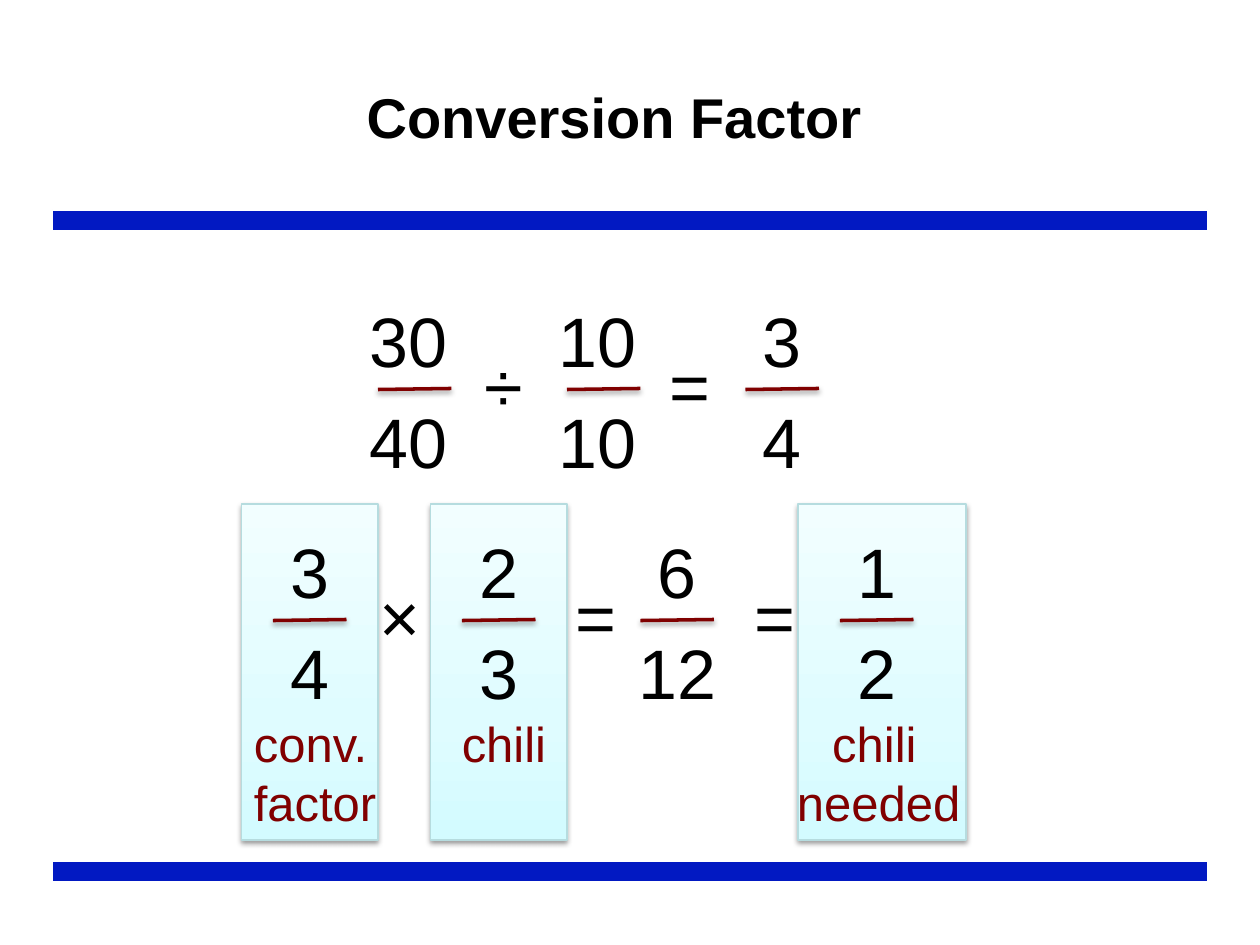
from lxml import etree
from pptx import Presentation
from pptx.dml.color import RGBColor
from pptx.enum.dml import MSO_LINE
from pptx.enum.shapes import MSO_CONNECTOR, MSO_SHAPE
from pptx.enum.text import MSO_ANCHOR, MSO_AUTO_SIZE, PP_ALIGN
from pptx.oxml import parse_xml
from pptx.oxml.ns import nsdecls, qn
from pptx.util import Inches, Pt

LEFT, CENTER = PP_ALIGN.LEFT, PP_ALIGN.CENTER
RECTANGLE, STRAIGHT = MSO_SHAPE.RECTANGLE, MSO_CONNECTOR.STRAIGHT
MIDDLE, TOP = MSO_ANCHOR.MIDDLE, MSO_ANCHOR.TOP
FIT_SHAPE, NO_FIT = MSO_AUTO_SIZE.SHAPE_TO_FIT_TEXT, MSO_AUTO_SIZE.NONE
SOLID = MSO_LINE.SOLID

# Content: places are columns and rows of a grid with 12 cells to the inch
TITLE = "Conversion Factor"
EQUATIONS = [
    {
        "row": 27,
        "fractions": [(34, "30", "40", LEFT), (52, "10", "10", LEFT), (69, "3", "4", CENTER)],
        "operators": [(45, "÷"), (62.6, "=")],
    },
    {
        "row": 49,
        "fractions": [(24, "3", "4", CENTER), (42, "2", "3", CENTER),
                      (59, "6", "12", CENTER), (78, "1", "2", CENTER)],
        "operators": [(35, "×"), (53.6, "="), (70.7, "=")],
    },
]
CARDS = [(76, 16), (41, 13), (23, 13)]  # column, width
BAR_ROWS = [20, 82]
CAPTIONS = ["conv.\tchili\tchili", "factor\tneeded"]
CAPTION_TABS = [(1.65, 4.59), (4.31,)]  # inches from the text edge

THEME = {
    "font": "Arial",
    "text": "000000",
    "accent": "800000",
    "bar": "0219C2",
    "bar_edge": "FFFFFF",
    "card_edge": "B6DCDF",
    "card_stops": [(0, "D3FBFF"), (35, "DFFCFF"), (100, "F2FEFF")],
    "title_size": 32,
    "math_size": 40,
    "caption_size": 28,
}


def grid(*cells):
    return [Inches(cell / 12) for cell in cells]


def write(shape, lines, size, color=THEME["text"], align=LEFT, bold=False, gap=0,
          tabs=(), wrap=True, fit=NO_FIT, anchor=TOP, margin_top=0.05):
    frame = shape.text_frame
    frame.word_wrap = wrap
    frame.auto_size = fit
    frame.vertical_anchor = anchor
    frame.margin_top = Inches(margin_top)
    for index, line in enumerate(lines):
        paragraph = frame.paragraphs[0] if index == 0 else frame.add_paragraph()
        paragraph.text = line
        paragraph.alignment = align
        paragraph.space_before = Pt(gap if index else 0)
        if tabs:
            tab_list = etree.SubElement(paragraph._p.get_or_add_pPr(), qn("a:tabLst"))
            for position in tabs[index]:
                etree.SubElement(tab_list, qn("a:tab"), pos=str(Inches(position)), algn="l")
        for run in paragraph.runs:
            run.font.name = THEME["font"]
            run.font.size = Pt(size)
            run.font.bold = bold
            run.font.color.rgb = RGBColor.from_string(color)


def set_line(shape, color, width):
    shape.line.color.rgb = RGBColor.from_string(color)
    shape.line.width = Pt(width)
    shape.line.dash_style = SOLID


def add_shadow(shape):
    properties = shape._element.spPr
    for effects in properties.findall(qn("a:effectLst")):
        properties.remove(effects)
    properties.append(parse_xml(
        f'<a:effectLst {nsdecls("a")}><a:outerShdw blurRad="{Pt(3.1)}" dist="{Pt(1.6)}" '
        'dir="5400000" rotWithShape="0"><a:srgbClr val="000000"><a:alpha val="38000"/>'
        '</a:srgbClr></a:outerShdw></a:effectLst>'))


def add_card(slide, column, width):
    card = slide.shapes.add_shape(RECTANGLE, *grid(column, 48, width, 32))
    card.fill.gradient()
    card.fill.gradient_angle = 90
    stops = card._element.spPr.find(qn("a:gradFill")).find(qn("a:gsLst"))
    for stop in list(stops):
        stops.remove(stop)
    for position, color in THEME["card_stops"]:
        stop = etree.SubElement(stops, qn("a:gs"), pos=str(position * 1000))
        etree.SubElement(stop, qn("a:srgbClr"), val=color)
    set_line(card, THEME["card_edge"], 0.75)
    add_shadow(card)


def add_bar(slide, row):
    bar = slide.shapes.add_shape(RECTANGLE, *grid(5, row, 110, 2))
    bar.shadow.inherit = False
    bar.fill.solid()
    bar.fill.fore_color.rgb = RGBColor.from_string(THEME["bar"])
    set_line(bar, THEME["bar_edge"], 0.75)


def add_fraction(slide, column, row, numerator, denominator, align):
    line = slide.shapes.add_connector(
        STRAIGHT, *grid(column + 2, row + 10.1, column + 9, row + 10))
    set_line(line, THEME["accent"], 2)
    add_shadow(line)
    box = slide.shapes.add_textbox(*grid(column, row, 11, 18))
    write(box, [numerator, denominator], THEME["math_size"], align=align,
          gap=10, margin_top=0.11)


def main():
    presentation = Presentation()
    presentation.slide_width, presentation.slide_height = Inches(10), Inches(7.5)
    slide = presentation.slides.add_slide(presentation.slide_layouts[5])

    # Title and bars
    title = slide.shapes.title
    title.left, title.top, title.width, title.height = grid(22, 3.6, 73, 15)
    write(title, [TITLE], THEME["title_size"], align=CENTER, bold=True, anchor=MIDDLE)
    for row in BAR_ROWS:
        add_bar(slide, row)

    # Cards behind the second equation
    for column, width in CARDS:
        add_card(slide, column, width)

    # Equations
    for equation in EQUATIONS:
        row = equation["row"]
        for column, numerator, denominator, align in equation["fractions"]:
            add_fraction(slide, column, row, numerator, denominator, align)
        for column, symbol in equation["operators"]:
            box = slide.shapes.add_textbox(*grid(column, row + 5, 6.4, 9.2))
            write(box, [symbol], THEME["math_size"], wrap=False, fit=FIT_SHAPE)

    # Captions under the fractions
    captions = slide.shapes.add_textbox(*grid(23, 67.4, 88, 12.5))
    write(captions, CAPTIONS, THEME["caption_size"], color=THEME["accent"],
          tabs=CAPTION_TABS, fit=FIT_SHAPE)

    presentation.save("out.pptx")


if __name__ == "__main__":
    main()
